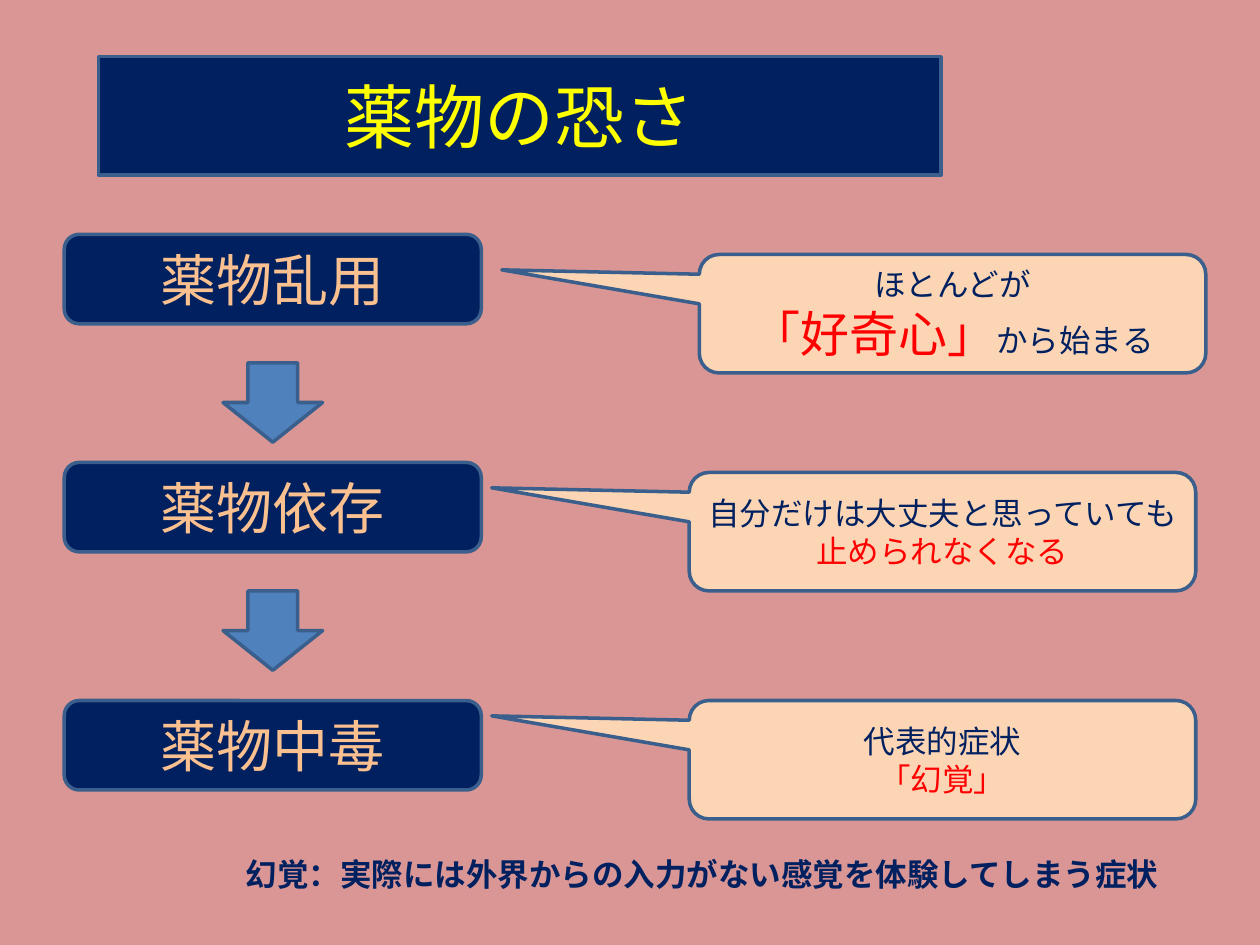
import pptx
import pptx.util
import pptx.dml.color
import pptx.enum.shapes
import pptx.enum.text
import pptx.oxml
import pptx.oxml.ns

Inches, Pt = pptx.util.Inches, pptx.util.Pt
SHAPE = pptx.enum.shapes.MSO_SHAPE
ALIGN = pptx.enum.text.PP_ALIGN
ANCHOR = pptx.enum.text.MSO_ANCHOR
AUTO = pptx.enum.text.MSO_AUTO_SIZE

FONT = "Noto Sans CJK JP"
NAVY, RED, YELLOW, ORANGE = "002060", "FF0000", "FFFF00", "FAC090"
PEACH, BLUE, EDGE, ROSE = "FCD5B5", "4F81BD", "3A5F8C", "D99694"

TITLE = "薬物の恐さ"
STAGES = [
    ("薬物乱用", 1.86, 5.55, 2.02,
     [[("ほとんどが", 18, NAVY)],
      [("「好奇心」", 28, RED), ("から始まる", 18, NAVY)]]),
    ("薬物依存", 3.67, 5.47, 3.75,
     [[("自分だけは大丈夫と思っていても", 18, NAVY)],
      [("止められなくなる", 18, RED)]]),
    ("薬物中毒", 5.56, 5.47, 5.56,
     [[("代表的症状", 18, NAVY)], [("「幻覚」", 18, RED)]]),
]
NOTE = "幻覚：実際には外界からの入力がない感覚を体験してしまう症状"
STAGE_W, STAGE_H = 3.31, 0.71
CALLOUT_W, CALLOUT_H = 4.02, 0.94
ARROW_X, ARROW_W, ARROW_H, ARROW_DROP = 1.77, 0.79, 0.63, 1.02


def rgb(value):
    return pptx.dml.color.RGBColor.from_string(value)


def add_text(sp, paragraphs, align=ALIGN.CENTER, anchor=ANCHOR.MIDDLE, bold=False):
    tf = sp.text_frame
    tf.word_wrap = True
    tf.vertical_anchor = anchor
    for i, runs in enumerate(paragraphs):
        p = tf.add_paragraph() if i else tf.paragraphs[0]
        p.alignment = align
        for text, size, color in runs:
            r = p.add_run()
            r.text = text
            r.font.size = Pt(size)
            r.font.bold = bold
            r.font.color.rgb = rgb(color)
            r.font.name = FONT
            ea = pptx.oxml.parse_xml(
                f'<a:ea {pptx.oxml.ns.nsdecls("a")} typeface="{FONT}"/>')
            r.font._element.append(ea)


def paint(sp, fill):
    sp.fill.solid()
    sp.fill.fore_color.rgb = rgb(fill)
    sp.line.color.rgb = rgb(EDGE)
    sp.line.width = Pt(2)


def add_box(s, kind, x, y, w, h, fill):
    sp = s.shapes.add_shape(kind, Inches(x), Inches(y), Inches(w), Inches(h))
    sp.shadow.inherit = False
    paint(sp, fill)
    return sp


def add_title(s):
    sp = s.shapes.title
    sp.left, sp.top = Inches(0.78), Inches(0.45)
    sp.width, sp.height = Inches(6.69), Inches(0.94)
    sp._element.spPr.append(pptx.oxml.parse_xml(
        f'<a:prstGeom {pptx.oxml.ns.nsdecls("a")} prst="roundRect"><a:avLst/></a:prstGeom>'))
    paint(sp, NAVY)
    sp.text_frame.auto_size = AUTO.NONE
    add_text(sp, [[(TITLE, 40, YELLOW)]])


def main():
    prs = pptx.Presentation()
    prs.slide_width, prs.slide_height = Inches(10), Inches(7.5)
    s = prs.slides.add_slide(prs.slide_layouts[5])
    s.background.fill.solid()
    s.background.fill.fore_color.rgb = rgb(ROSE)
    add_title(s)

    for i, (name, y, callout_x, callout_y, lines) in enumerate(STAGES):
        stage = add_box(s, SHAPE.ROUNDED_RECTANGLE, 0.51, y, STAGE_W, STAGE_H, NAVY)
        add_text(stage, [[(name, 32, ORANGE)]])
        callout = add_box(s, SHAPE.ROUNDED_RECTANGULAR_CALLOUT,
                          callout_x, callout_y, CALLOUT_W, CALLOUT_H, PEACH)
        callout.adjustments[0] = -0.89
        callout.adjustments[1] = -0.37
        add_text(callout, lines)
        if i < len(STAGES) - 1:
            add_box(s, SHAPE.DOWN_ARROW, ARROW_X, y + ARROW_DROP, ARROW_W, ARROW_H, BLUE)

    note = s.shapes.add_textbox(Inches(1.85), Inches(6.74), Inches(7.72), Inches(0.4))
    add_text(note, [[(NOTE, 18, NAVY)]], align=ALIGN.LEFT, anchor=ANCHOR.TOP, bold=True)
    note.text_frame.auto_size = AUTO.SHAPE_TO_FIT_TEXT
    prs.save("out.pptx")


if __name__ == "__main__":
    main()
